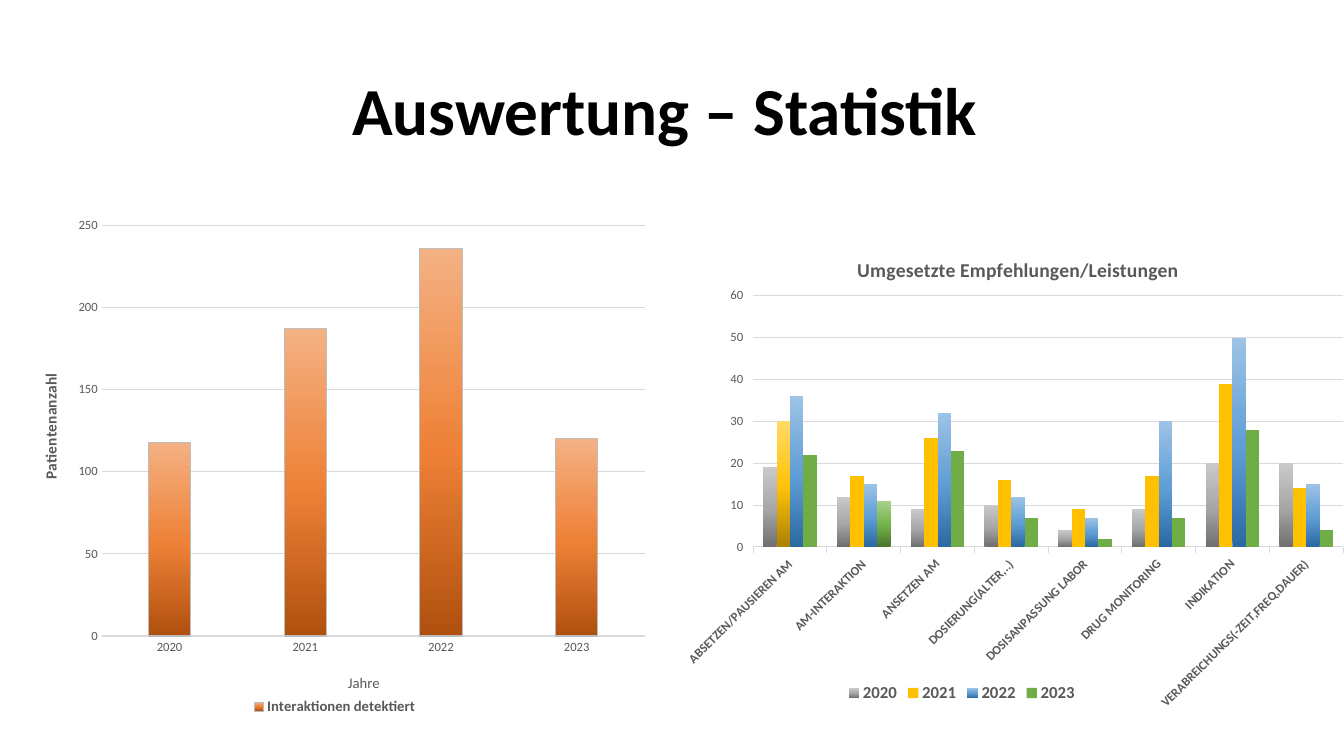
from copy import deepcopy

from lxml.etree import SubElement
from pptx import Presentation
from pptx.chart.data import CategoryChartData
from pptx.dml.color import RGBColor
from pptx.enum.chart import XL_CHART_TYPE, XL_LEGEND_POSITION, XL_TICK_MARK
from pptx.enum.text import MSO_ANCHOR, PP_ALIGN
from pptx.oxml.ns import qn
from pptx.util import Inches, Pt

TITLE = "Auswertung – Statistik "


class Theme:
    font = "Calibri"
    black, text, grid, edge = "000000", "595959", "D9D9D9", "BDBDBD"
    # gradients run from the bottom of a column to its top
    orange = ("B0500F", "EE8137", "F4B183")
    gray = ("6F6F6F", "A8A8A8", "C9C9C9")
    gold = ("AB8100", "FFC208", "FFD966")
    blue = ("2A69A2", "609ED6", "9DC3E6")
    green = ("4B7430", "74B349", "A9D18E")
    flat_gold, flat_green = "FFC000", "70AD47"
    stops = (0, 0.48, 1)
    head, chart, tick, base, line = 48, 14, 9, 10, 0.75


# Places inside a chart (plot, legend, titles) are fractions of its size.
PATIENTS = dict(
    box=(0.2, 2.06, 6.32, 5.3),
    cats=["2020", "2021", "2022", "2023"],
    series=[("Interaktionen detektiert", [118, 187, 236, 120], Theme.orange, {})],
    edge=Theme.edge, gap=219, overlap=-27, top=250, step=50,
    tick=XL_TICK_MARK.NONE, bold=False, turn=0,
    plot=(0.128, 0.033, 0.852, 0.769), legend=(0.36, 0.91), key=10.5,
    titles=[("category", "Jahre", 10.5, False, 0, (0.51, 0.867)),
            ("value", "Patientenanzahl", 11, True, -90, (0.027, 0.305))],
)
ADVICE = dict(
    box=(6.67, 2.24, 6.78, 5.26),
    cats=["ABSETZEN/PAUSIEREN AM", "AM-INTERAKTION", "ANSETZEN AM",
          "DOSIERUNG(ALTER,..)", "DOSISANPASSUNG LABOR", "DRUG MONITORING",
          "INDIKATION", "VERABREICHUNGS(-ZEIT,FREQ,DAUER)"],
    series=[
        ("2020", [19, 12, 9, 10, 4, 9, 20, 20], Theme.gray, {}),
        ("2021", [30, 17, 26, 16, 9, 17, 39, 14], Theme.flat_gold, {0: Theme.gold}),
        ("2022", [36, 15, 32, 12, 7, 30, 50, 15], Theme.blue, {}),
        ("2023", [22, 11, 23, 7, 2, 7, 28, 4], Theme.flat_green, {1: Theme.green}),
    ],
    edge=None, gap=150, overlap=0, top=60, step=10,
    tick=XL_TICK_MARK.OUTSIDE, bold=True, turn=-45,
    plot=(0.118, 0.132, 0.863, 0.474), legend=(0.25, 0.855), key=12,
    titles=[("chart", "Umgesetzte Empfehlungen/Leistungen", Theme.chart, True, 0,
             (0.265, 0.05))],
)


def style(font, size, color=Theme.text, bold=False):
    font.name, font.size, font.bold = Theme.font, Pt(size), bold
    font.color.rgb = RGBColor.from_string(color)


def write(frame, text, align=PP_ALIGN.CENTER, spacing=None, **look):
    para = frame.paragraphs[0]
    para.alignment, para.line_spacing = align, spacing
    run = para.add_run()
    run.text = text
    style(run.font, **look)


def stroke(line, color):
    line.color.rgb = RGBColor.from_string(color)
    line.width = Pt(Theme.line)


def paint(form, color):
    """Fill with one colour, or with a three-stop gradient for a tuple."""
    fill = form.fill
    if isinstance(color, str):
        fill.solid()
        fill.fore_color.rgb = RGBColor.from_string(color)
        return
    fill.gradient()
    fill.gradient_angle = 90
    stops = form._element.find(qn("c:spPr")).find(".//" + qn("a:gsLst"))
    stops.insert(1, deepcopy(stops[0]))
    for stop, place, tone in zip(fill.gradient_stops, Theme.stops, color):
        stop.position = place
        stop.color.rgb = RGBColor.from_string(tone)


def place(part, spots, inner=False):
    """Set a manual layout: x, y and optionally w, h as chart fractions."""
    old = part.find(qn("c:layout"))
    if old is not None:
        part.remove(old)
    layout = SubElement(part, qn("c:layout"))
    manual = SubElement(layout, qn("c:manualLayout"))
    if inner:
        SubElement(manual, qn("c:layoutTarget")).set("val", "inner")
    for name in "xy":
        SubElement(manual, qn(f"c:{name}Mode")).set("val", "edge")
    for name, spot in zip("xywh", spots):
        SubElement(manual, qn(f"c:{name}")).set("val", str(spot))
    lead = [kid for kid in part if kid.tag in (qn("c:tx"), qn("c:legendPos"))]
    part.insert(len(lead), layout)


def rotate(part, angle):
    part.find(".//" + qn("a:bodyPr")).set("rot", str(angle * 60000))


def draw(slide, info):
    data = CategoryChartData()
    data.categories = info["cats"]
    for name, vals, *_ in info["series"]:
        data.add_series(name, vals)
    box = [Inches(n) for n in info["box"]]
    chart = slide.shapes.add_chart(XL_CHART_TYPE.COLUMN_CLUSTERED, *box, data).chart
    style(chart.font, Theme.base, Theme.black)
    chart.has_title = False

    plot = chart.plots[0]
    plot.gap_width, plot.overlap = info["gap"], info["overlap"]
    plot.vary_by_categories = False
    for ser, (_, _, color, points) in zip(plot.series, info["series"]):
        paint(ser.format, color)
        if info["edge"]:
            stroke(ser.format.line, info["edge"])
        for spot, tone in points.items():
            paint(ser.points[spot].format, tone)

    cat, val = chart.category_axis, chart.value_axis
    for axis, bold in ((cat, info["bold"]), (val, False)):
        style(axis.tick_labels.font, Theme.tick, bold=bold)
        axis.major_tick_mark = info["tick"]
        axis.minor_tick_mark = XL_TICK_MARK.NONE
    stroke(cat.format.line, Theme.grid)
    rotate(cat._element.find(qn("c:txPr")), info["turn"])
    val.format.line.fill.background()
    val.minimum_scale, val.maximum_scale = 0, info["top"]
    val.major_unit = info["step"]
    val.has_major_gridlines = True
    stroke(val.major_gridlines.format.line, Theme.grid)

    owners = {"chart": chart, "category": cat, "value": val}
    for kind, text, size, bold, turn, spots in info["titles"]:
        owner = owners[kind]
        owner.has_title = True
        title = owner.chart_title if kind == "chart" else owner.axis_title
        write(title.text_frame, text, size=size, bold=bold)
        rotate(title._element, turn)
        place(title._element, spots)

    chart.has_legend = True
    legend = chart.legend
    legend.position = XL_LEGEND_POSITION.BOTTOM
    legend.include_in_layout = False
    style(legend.font, info["key"], bold=True)
    place(legend._element, info["legend"])
    place(chart._chartSpace.find(".//" + qn("c:plotArea")), info["plot"], inner=True)


def main():
    deck = Presentation()
    deck.slide_width, deck.slide_height = Inches(13.33), Inches(7.5)
    slide = deck.slides.add_slide(deck.slide_layouts[5])
    title = slide.shapes.title
    title.left, title.top = Inches(0.92), Inches(0.4)
    title.width, title.height = Inches(11.5), Inches(1.45)
    title.text_frame.vertical_anchor = MSO_ANCHOR.MIDDLE
    write(title.text_frame, TITLE, spacing=0.9, size=Theme.head,
          color=Theme.black, bold=True)
    for info in (PATIENTS, ADVICE):
        draw(slide, info)
    deck.save("out.pptx")


if __name__ == "__main__":
    main()
